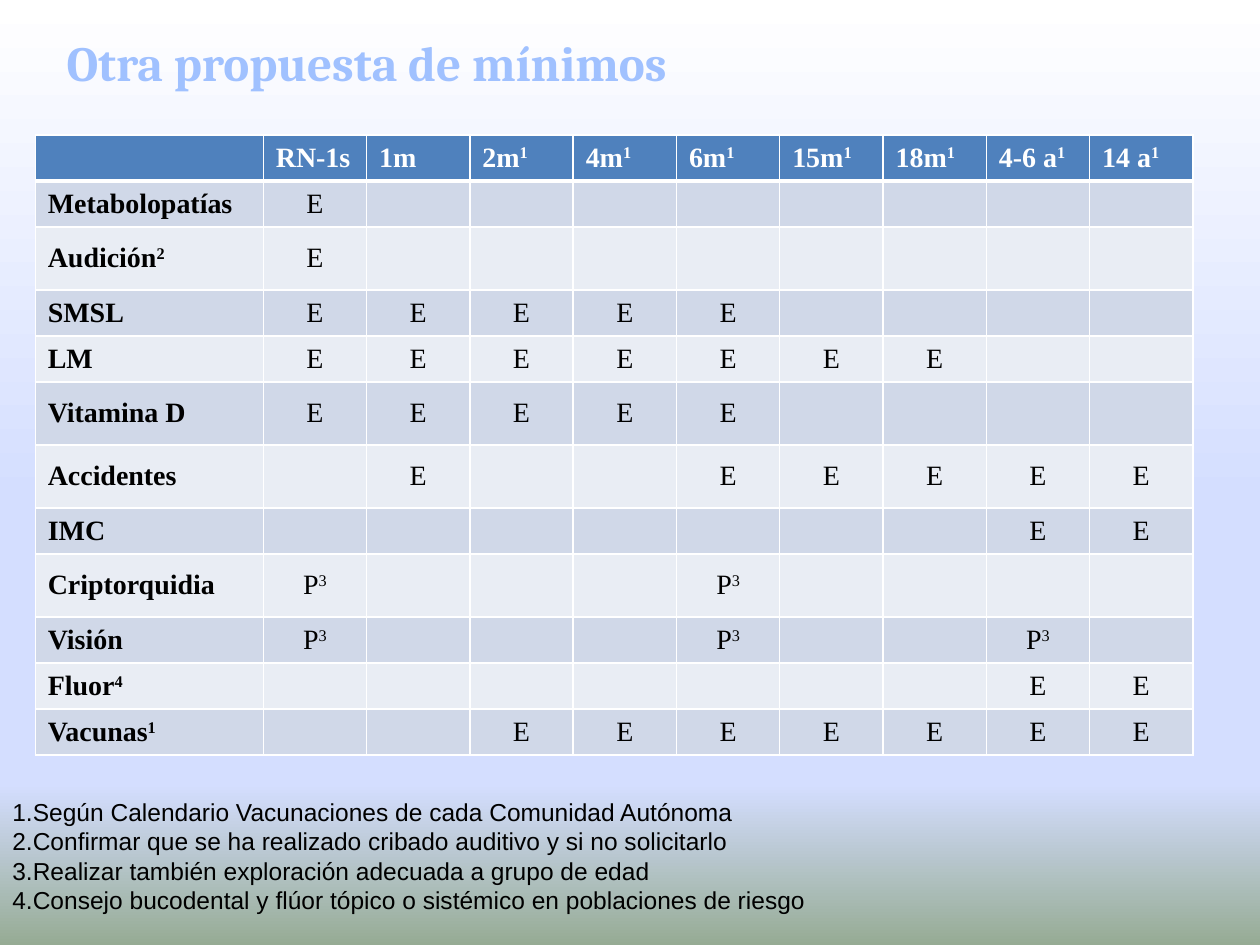
from lxml.etree import SubElement
from pptx import Presentation
from pptx.dml.color import RGBColor
from pptx.enum.text import MSO_ANCHOR as ANCHOR, PP_ALIGN as ALIGN
from pptx.oxml import parse_xml
from pptx.oxml.ns import nsdecls, qn
from pptx.util import Inches, Pt

AGES = ["RN-1s", "1m", "2m^1", "4m^1", "6m^1", "15m^1", "18m^1", "4-6 a^1", "14 a^1"]
SHORT, TALL = 0.35, 0.5
CHECKS = [
    ("Metabolopatías", SHORT, "E", [0]),
    ("Audición^2", TALL, "E", [0]),
    ("SMSL", SHORT, "E", range(5)),
    ("LM", SHORT, "E", range(7)),
    ("Vitamina D", TALL, "E", range(5)),
    ("Accidentes", TALL, "E", [1, 4, 5, 6, 7, 8]),
    ("IMC", SHORT, "E", [7, 8]),
    ("Criptorquidia", TALL, "P^3", [0, 4]),
    ("Visión", SHORT, "P^3", [0, 4, 7]),
    ("Fluor^4", SHORT, "E", [7, 8]),
    ("Vacunas^1", SHORT, "E", range(2, 9)),
]
NOTES = [
    "Según Calendario Vacunaciones de cada Comunidad Autónoma",
    "Confirmar que se ha realizado cribado auditivo y si no solicitarlo",
    "Realizar también exploración adecuada a grupo de edad",
    "Consejo bucodental y flúor tópico o sistémico en poblaciones de riesgo",
]


def rgb(value):
    return RGBColor.from_string(value)


class SlideBuilder:
    title_font, table_font, note_font = "Cambria", "Times New Roman", "Arial"
    header, bands = "4F81BD", ("D0D8E8", "E9EDF4")
    white, black, title_color = "FFFFFF", "000000", "A0C1FF"

    def __init__(self, slide):
        self.slide = slide

    def background(self, stops):
        fill = self.slide.background.fill
        fill.gradient()
        fill.gradient_angle = 270
        gs_list = self.slide.background._cSld.find(".//" + qn("a:gsLst"))
        for gs in list(gs_list):
            gs_list.remove(gs)
        for pos, color in stops:
            gs = SubElement(gs_list, qn("a:gs"), pos=str(pos * 1000))
            SubElement(gs, qn("a:srgbClr"), val=color)

    def style(self, r, font, size, color, bold=False):
        r.font.name, r.font.size, r.font.bold = font, Pt(size), bold
        r.font.color.rgb = rgb(color)

    def text(self, left, top, width, height, lines, font, size, color, bold=False):
        sp = self.slide.shapes.add_textbox(Inches(left), Inches(top), Inches(width), Inches(height))
        tf = sp.text_frame
        tf.word_wrap = True
        tf.text = "\n".join(lines)
        for p in tf.paragraphs:
            self.style(p.runs[0], font, size, color, bold)
        return tf

    def numbered(self, left, top, width, height, lines, size, margin_top):
        tf = self.text(left, top, width, height, lines, self.note_font, size, self.black)
        tf.margin_top = Inches(margin_top)
        tf.vertical_anchor = ANCHOR.MIDDLE
        for p in tf.paragraphs:
            pPr = p._p.get_or_add_pPr()
            pPr.set("marL", "0")
            pPr.set("indent", "0")
            SubElement(pPr, qn("a:buAutoNum"), type="arabicPeriod")

    def borders(self, cell, top, bottom):
        tcPr = cell._tc.get_or_add_tcPr()
        for i, (side, width) in enumerate((("L", 1), ("R", 1), ("T", top), ("B", bottom))):
            tcPr.insert(i, parse_xml(
                f'<a:ln{side} {nsdecls("a")} w="{Pt(width)}"><a:solidFill>'
                f'<a:srgbClr val="{self.white}"/></a:solidFill></a:ln{side}>'))

    def cell(self, cell, text, fill, color, bold, align):
        cell.fill.solid()
        cell.fill.fore_color.rgb = rgb(fill)
        cell.vertical_anchor = ANCHOR.MIDDLE
        cell.margin_top = cell.margin_bottom = Inches(0.03)
        p = cell.text_frame.paragraphs[0]
        p.alignment = align
        base, _, mark = text.partition("^")
        for part in filter(None, (base, mark)):
            r = p.add_run()
            r.text = part
            self.style(r, self.table_font, 16, color, bold)
        if mark:
            p.runs[-1]._r.get_or_add_rPr().set("baseline", "30000")

    def table(self, left, top, widths, heights, rows):
        table = self.slide.shapes.add_table(
            len(rows), len(widths), Inches(left), Inches(top),
            Inches(sum(widths)), Inches(sum(heights))).table
        for column, width in zip(table.columns, widths):
            column.width = Inches(width)
        for i, (row, height) in enumerate(zip(rows, heights)):
            table.rows[i].height = Inches(height)
            fill = self.bands[(i - 1) % 2] if i else self.header
            color = self.black if i else self.white
            for j, text in enumerate(row):
                cell = table.cell(i, j)
                align = ALIGN.CENTER if i and j else ALIGN.LEFT
                self.cell(cell, text, fill, color, i == 0 or j == 0, align)
                self.borders(cell, 3 if i == 1 else 1, 3 if i == 0 else 1)


def main():
    prs = Presentation()
    prs.slide_width, prs.slide_height = Inches(10), Inches(7.5)
    s = SlideBuilder(prs.slides.add_slide(prs.slide_layouts[6]))
    s.background([(0, "FFFFFF"), (53, "D4DEFF"), (83, "D4DEFF"), (100, "96AB94")])

    rows = [[""] + AGES]
    for name, _, mark, ages in CHECKS:
        rows.append([name] + [mark if i in ages else "" for i in range(len(AGES))])
    heights = [SHORT] + [check[1] for check in CHECKS]
    s.table(0.28, 1.07, [1.81] + [0.82] * len(AGES), heights, rows)

    s.numbered(0, 5.97, 6.7, 1.35, NOTES, 14, 0.34)
    s.text(0.43, 0.21, 5.29, 0.57, ["Otra propuesta de mínimos"],
           s.title_font, 28, s.title_color, bold=True)
    prs.save("out.pptx")


if __name__ == "__main__":
    main()
